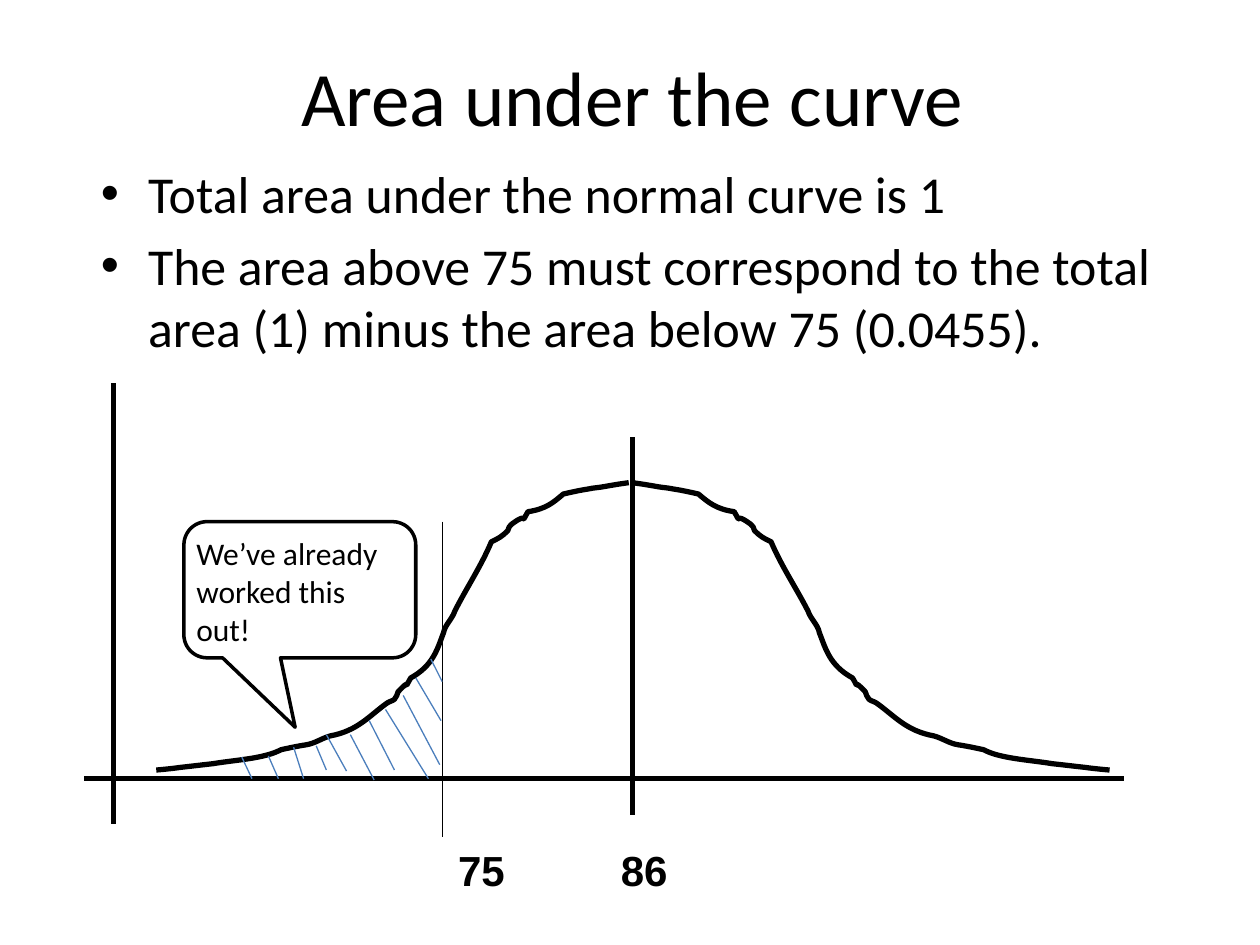
"""Builds a slide on the area under the normal curve."""
from itertools import chain
from lxml.etree import SubElement
from pptx import Presentation
from pptx.dml.color import RGBColor
from pptx.enum.shapes import MSO_CONNECTOR as CONN, MSO_SHAPE as SHAPE
from pptx.enum.text import MSO_ANCHOR as ANCHOR, MSO_AUTO_SIZE as AUTO, PP_ALIGN as ALIGN
from pptx.oxml.ns import qn
from pptx.util import Pt

THEME = {
    "ink": "000000", "hatch": "4B7EBC", "font": "Calibri", "label_font": "Arial",
    "title": 44, "body": 29.6, "label": 24, "note": 18,
    "thick": 3, "outline": 2, "thin": 0.75,
}

TITLE = "Area under the curve"
BULLETS = [
    "Total area under the normal curve is 1",
    "The area above 75 must correspond to the total area (1) minus the area below 75 (0.0455).",
]
NOTE = "We’ve already worked this out!"
LABELS = [("75", 20), ("86", 113)]

AXES = [
    (48.2, 445, 642.2, 445),
    (361.4, 249.8, 361.4, 465.8),
    (64.8, 218.9, 64.8, 470.9),
]
CUTOFF = (252.7, 298.1, 252.7, 478.1)
HATCHES = [
    (138.2, 432.7, 144, 445), (153.4, 432, 159.1, 445), (167.8, 427, 173.5, 445),
    (180.7, 426.2, 186.5, 440), (186.5, 419.8, 198, 440.6), (200.2, 419.8, 213.8, 445.7),
    (211, 411.8, 225.4, 440), (220.3, 405.4, 244.8, 445), (230.4, 397.4, 251.3, 437),
    (246.2, 376.6, 252.7, 389.5), (237.6, 387.4, 252, 411.8),
]

PEAK_Y = 275.8
HALVES = [(359.3, -1), (361.4, 1.01)]
HALF_BELL = [
    ((5, 0.7), (9.4, 1.4), (13.7, 2.2)),
    ((17.3, 2.9), (20.2, 2.9), (23, 3.6)),
    ((28.1, 4.3), (37.4, 6.5), (37.4, 6.5)),
    ((43.2, 11.5), (47.5, 15.1), (57.6, 16.6)),
    ((63.4, 26.6), (55.4, 15.1), (67, 23.8)),
    ((68.4, 24.5), (68.4, 25.9), (69.1, 27.4)),
    ((72.7, 31), (74.2, 31.7), (78.5, 33.8)),
    ((84.2, 47.5), (92.9, 60.5), (99.4, 73.4)),
    ((100.8, 77.8), (105.1, 81.4), (105.8, 85.7)),
    ((109.4, 95), (111.6, 104.4), (124.6, 111.6)),
    ((130.3, 121.7), (122.4, 109.4), (131.8, 119.5)),
    ((132.5, 121), (132.5, 122.4), (133.9, 123.8)),
    ((134.6, 124.6), (137.5, 125.3), (138.2, 126)),
    ((148.3, 133.2), (154.8, 141.8), (170.6, 144.7)),
    ((175.7, 146.2), (179.3, 149), (184.3, 149.8)),
    ((189.4, 150.5), (198.7, 152.6), (198.7, 152.6)),
    ((208.1, 157.7), (224.6, 158.4), (237.6, 160.6)),
    ((244.1, 161.3), (249.8, 162), (256.3, 162.7)),
    ((260.6, 163.4), (270, 164.2), (270, 164.2)),
]


def rgb(name):
    return RGBColor.from_string(THEME[name])


def place(sp, box):
    sp.left, sp.top, sp.width, sp.height = map(Pt, box)


def write(sp, lines, size, font="font", bold=False, align=None, anchor=ANCHOR.TOP):
    tf = sp.text_frame
    tf.word_wrap, tf.auto_size, tf.vertical_anchor = True, AUTO.NONE, anchor
    for i, line in enumerate(lines):
        p = tf.add_paragraph() if i else tf.paragraphs[0]
        p.alignment = align
        r = p.add_run()
        r.text = line
        r.font.name, r.font.size, r.font.bold = THEME[font], Pt(THEME[size]), bold
        r.font.color.rgb = rgb("ink")
    return tf


def stroke(sp, color, width):
    sp.line.color.rgb, sp.line.width = rgb(color), Pt(THEME[width])


def add_line(shapes, ends, color="ink", width="thick"):
    c = shapes.add_connector(CONN.STRAIGHT, *map(Pt, ends))
    stroke(c, color, width)
    SubElement(c.element.spPr, qn("a:effectLst"))


def outline(sp, width):
    sp.shadow.inherit = False
    sp.fill.background()
    stroke(sp, "ink", width)


def bend(sp):
    lines = list(sp.element.iter(qn("a:lnTo")))
    geom = lines[0].getparent()
    for i in range(0, len(lines), 3):
        curve = SubElement(geom, qn("a:cubicBezTo"))
        for line in lines[i:i + 3]:
            curve.append(line[0])
            geom.remove(line)


def add_half_bell(shapes, peak_x, stretch):
    points = [(Pt(peak_x + stretch * x), Pt(PEAK_Y + y)) for x, y in chain.from_iterable(HALF_BELL)]
    builder = shapes.build_freeform(Pt(peak_x), Pt(PEAK_Y))
    builder.add_line_segments(points, close=False)
    sp = builder.convert_to_shape()
    bend(sp)
    outline(sp, "thick")


def add_labels(shapes):
    sp = shapes.add_textbox(*map(Pt, (234.7, 478.8, 442.1, 36.7)))
    line = "".join("\t" + text for text, _ in LABELS)
    tf = write(sp, [line], "label", font="label_font", bold=True)
    tabs = SubElement(tf.paragraphs[0]._p.get_or_add_pPr(), qn("a:tabLst"))
    for _, stop in LABELS:
        SubElement(tabs, qn("a:tab"), pos=str(Pt(stop)), algn="l")


def main():
    prs = Presentation()
    prs.slide_width, prs.slide_height = Pt(720), Pt(540)
    s = prs.slides.add_slide(prs.slide_layouts[1])
    shapes = s.shapes
    title, body = s.placeholders
    place(title, (37.4, 9.4, 648, 90))
    write(title, [TITLE], "title", align=ALIGN.CENTER, anchor=ANCHOR.MIDDLE)
    place(body, (50.4, 88.6, 657.4, 110.2))
    write(body, BULLETS, "body")

    for half in HALVES:
        add_half_bell(shapes, *half)
    for axis in AXES:
        add_line(shapes, axis)
    add_line(shapes, CUTOFF, width="thin")
    add_labels(shapes)
    for hatch in HATCHES:
        add_line(shapes, hatch, "hatch", "thin")

    callout = shapes.add_shape(SHAPE.ROUNDED_RECTANGULAR_CALLOUT, *map(Pt, (105.1, 298.1, 132.5, 77.8)))
    for i, value in enumerate((-0.02, 1.01, 0.17)):
        callout.adjustments[i] = value
    outline(callout, "outline")
    note = shapes.add_textbox(*map(Pt, (105.1, 301.7, 129.6, 72.7)))
    write(note, [NOTE], "note")
    prs.save("out.pptx")


if __name__ == "__main__":
    main()
